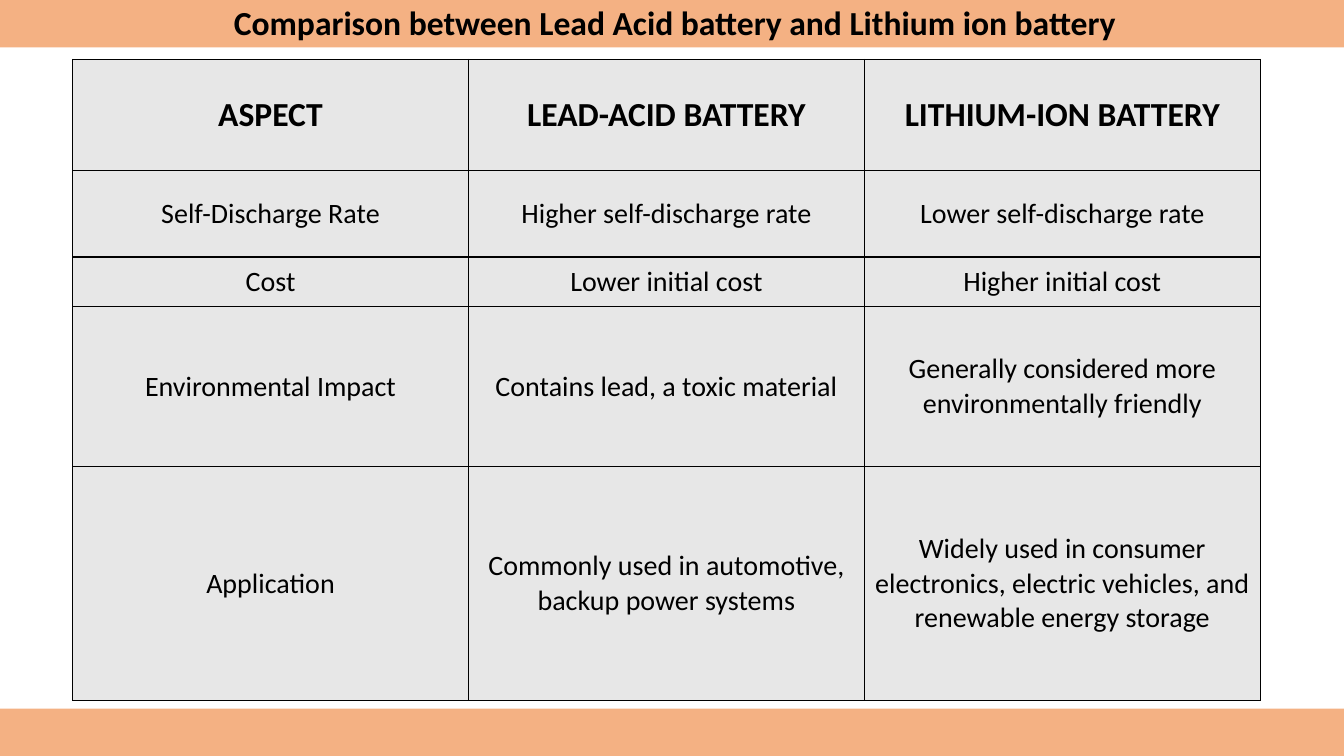
from lxml.etree import SubElement
from pptx import Presentation
from pptx.dml.color import RGBColor
from pptx.enum.shapes import MSO_SHAPE
from pptx.enum.text import MSO_ANCHOR, PP_ALIGN
from pptx.oxml.ns import qn
from pptx.util import Inches, Pt

COLORS = {"bar": "F4B183", "cell": "E7E7E7", "ink": "000000"}
WIDE, HIGH, BAR = 13.33, 7.5, 0.47
HEIGHTS = [1.1, 0.86, 0.49, 1.59, 2.32]
ROWS = [
    ("ASPECT", "LEAD-ACID BATTERY", "LITHIUM-ION BATTERY"),
    ("Self-Discharge Rate", "Higher self-discharge rate", "Lower self-discharge rate"),
    ("Cost", "Lower initial cost", "Higher initial cost"),
    ("Environmental Impact", "Contains lead, a toxic material",
     "Generally considered more environmentally friendly"),
    ("Application", "Commonly used in automotive, backup power systems",
     "Widely used in consumer electronics, electric vehicles, and renewable energy storage"),
]
HEAD = {"name": "Calibri", "size": Pt(24), "bold": True}
BODY = {"name": "Calibri", "size": Pt(20), "bold": False}


def color(name):
    return RGBColor.from_string(COLORS[name])


def paint(item, name):
    item.fill.solid()
    item.fill.fore_color.rgb = color(name)


def write(frame, text, style):
    frame.text = text
    par = frame.paragraphs[0]
    par.alignment = PP_ALIGN.CENTER
    font = par.runs[0].font
    for key, value in style.items():
        setattr(font, key, value)
    font.color.rgb = color("ink")


def edge(cell):
    """Draw a thin line on all four sides of a cell."""
    props = cell._tc.get_or_add_tcPr()
    for spot, side in enumerate(("lnL", "lnR", "lnT", "lnB")):
        line = SubElement(props, qn(f"a:{side}"), w=str(Pt(1)))
        fill = SubElement(line, qn("a:solidFill"))
        SubElement(fill, qn("a:srgbClr"), val=COLORS["ink"])
        props.insert(spot, line)


def add_bars(slide, box):
    left, top, width, height = box
    group = slide.shapes.add_group_shape()
    for y in (top, top + height - BAR):
        bar = group.shapes.add_shape(
            MSO_SHAPE.RECTANGLE, *map(Inches, (left, y, width, BAR)))
        bar.shadow.inherit = False
        paint(bar, "bar")
        bar.line.fill.background()


def add_title(slide, box, text):
    title = slide.shapes.title
    title.left, title.top, title.width, title.height = map(Inches, box)
    frame = title.text_frame
    frame.word_wrap = True
    frame.vertical_anchor = MSO_ANCHOR.MIDDLE
    write(frame, text, HEAD)
    # Bring the title in front of the bars
    title.element.getparent().append(title.element)


def add_grid(slide, box):
    table = slide.shapes.add_table(
        len(ROWS), len(ROWS[0]), *map(Inches, box)).table
    table.first_row = table.horz_banding = False
    for col in table.columns:
        col.width = Inches(box[2] / len(ROWS[0]))
    for i, (texts, high) in enumerate(zip(ROWS, HEIGHTS)):
        table.rows[i].height = Inches(high)
        for j, text in enumerate(texts):
            cell = table.cell(i, j)
            cell.vertical_anchor = MSO_ANCHOR.MIDDLE
            paint(cell, "cell")
            edge(cell)
            write(cell.text_frame, text, BODY if i else HEAD)


def main():
    deck = Presentation()
    deck.slide_width, deck.slide_height = Inches(WIDE), Inches(HIGH)
    slide = deck.slides.add_slide(deck.slide_layouts[5])
    add_bars(slide, (0, 0, WIDE, HIGH))
    add_title(slide, (0.48, -0.03, 12.43, 0.5),
              "Comparison between Lead Acid battery and Lithium ion battery")
    add_grid(slide, (0.72, 0.59, 11.78, sum(HEIGHTS)))
    deck.save("out.pptx")


if __name__ == "__main__":
    main()
